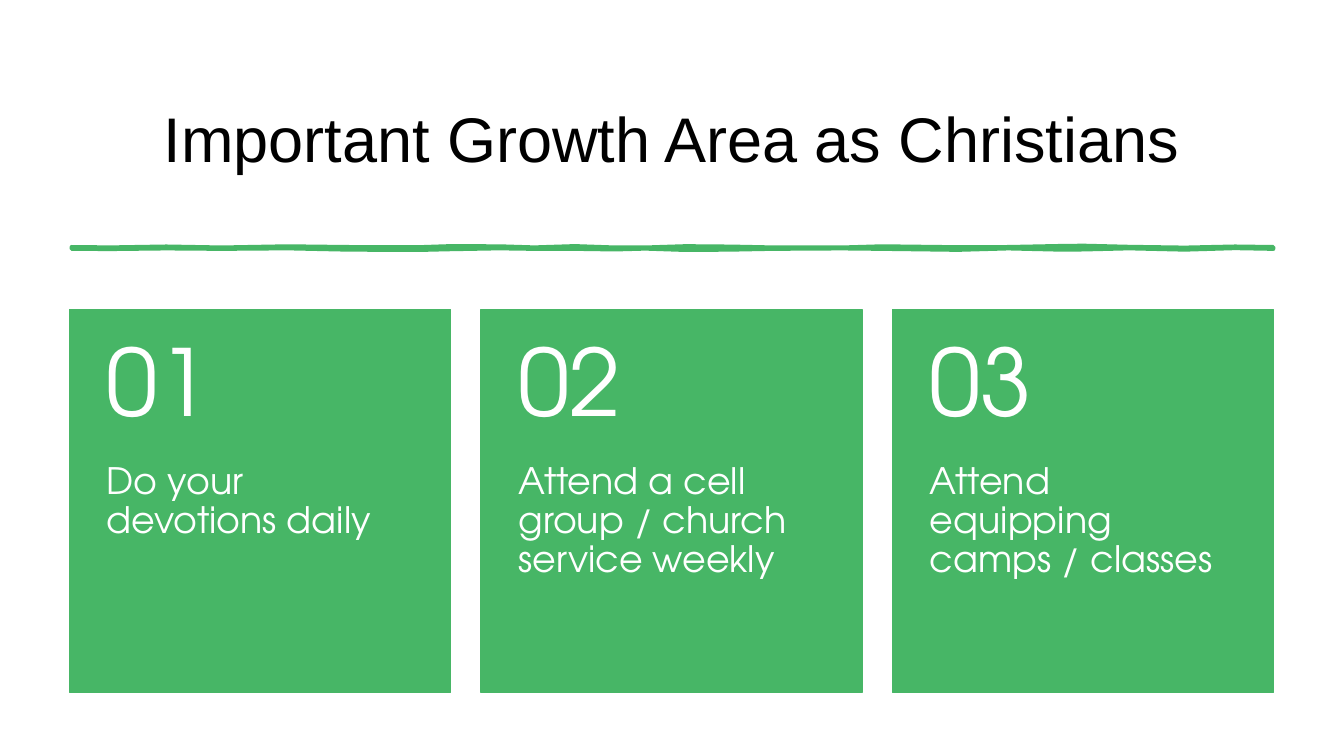
from pptx import Presentation
from pptx.dml.color import RGBColor
from pptx.enum.shapes import MSO_SHAPE
from pptx.enum.text import MSO_ANCHOR, PP_ALIGN
from pptx.util import Pt

# Content
TITLE = "Important Growth Area as Christians"
GROWTH_AREAS = [
    ("01", "Do your devotions daily"),
    ("02", "Attend a cell group / church service weekly"),
    ("03", "Attend equipping camps / classes"),
]
GREEN, WHITE, BLACK = "47B666", "FFFFFF", "000000"
TITLE_FONT, CARD_FONT = "Arial", "TeX Gyre Adventor"

# Layout in px, 100 px to the inch
PX = 9144
SLIDE_W, SLIDE_H = 1333, 750
LEFT, CONTENT_W = 69, 1194
TITLE_TOP, TITLE_H = 69, 144
CARD_TOP, CARD_W, CARD_H, NUMBER_H = 307, 378, 380, 152
CARD_STEP = (CONTENT_W - CARD_W) // (len(GROWTH_AREAS) - 1)
INSET_X = 37

# Hand-drawn rule: x in px, then top and bottom edge in tenths of a px
RULE_EDGES = [
    (71, 2450, 2470), (110, 2454, 2472), (165, 2445, 2466),
    (220, 2455, 2470), (285, 2443, 2465), (345, 2450, 2478),
    (415, 2452, 2481), (445, 2442, 2474), (495, 2443, 2465),
    (530, 2454, 2470), (570, 2441, 2470), (610, 2455, 2476),
    (640, 2455, 2468), (680, 2442, 2481), (725, 2446, 2478),
    (765, 2454, 2470), (835, 2455, 2466), (875, 2443, 2470),
    (950, 2452, 2480), (1000, 2450, 2466), (1055, 2439, 2479),
    (1075, 2437, 2476), (1120, 2448, 2465), (1175, 2456, 2478),
    (1225, 2445, 2463), (1263, 2450, 2470),
]


def color(value):
    return RGBColor.from_string(value)


def box(left, top, width, height):
    return [length * PX for length in (left, top, width, height)]


def paint(shape, line_width):
    shape.shadow.inherit = False
    shape.fill.solid()
    shape.fill.fore_color.rgb = color(GREEN)
    shape.line.color.rgb = color(GREEN)
    shape.line.width = Pt(line_width)


def write(frame, text, font, size, text_color, align, anchor):
    frame.word_wrap = True
    frame.vertical_anchor = anchor
    paragraph = frame.paragraphs[0]
    paragraph.alignment = align
    paragraph.line_spacing = 0.9
    run = paragraph.add_run()
    run.text = text
    run.font.name = font
    run.font.size = Pt(size)
    run.font.color.rgb = color(text_color)


def add_card_text(slide, area, text, size, anchor, inset_top, inset_bottom):
    frame = slide.shapes.add_textbox(*box(*area)).text_frame
    frame.margin_left = frame.margin_right = INSET_X * PX
    frame.margin_top, frame.margin_bottom = inset_top * PX, inset_bottom * PX
    write(frame, text, CARD_FONT, size, WHITE, PP_ALIGN.LEFT, anchor)


def add_rule(slide):
    top_edge = [(x * 10, top) for x, top, _ in RULE_EDGES]
    bottom_edge = [(x * 10, bottom) for x, _, bottom in RULE_EDGES]
    outline = top_edge + bottom_edge[::-1]
    builder = slide.shapes.build_freeform(*outline[0], scale=PX / 10)
    builder.add_line_segments(outline[1:], close=True)
    paint(builder.convert_to_shape(), 2.75)


def add_card(slide, left, number, task):
    card = slide.shapes.add_shape(
        MSO_SHAPE.RECTANGLE, *box(left, CARD_TOP, CARD_W, CARD_H))
    paint(card, 1)
    task_area = (left, CARD_TOP + NUMBER_H, CARD_W, CARD_H - NUMBER_H)
    add_card_text(slide, task_area, task, 26, MSO_ANCHOR.TOP, 0, 36)
    number_area = (left, CARD_TOP, CARD_W, NUMBER_H)
    add_card_text(slide, number_area, number, 66, MSO_ANCHOR.MIDDLE, 18, 18)


def main():
    deck = Presentation()
    deck.slide_width, deck.slide_height = SLIDE_W * PX, SLIDE_H * PX
    slide = deck.slides.add_slide(deck.slide_layouts[5])
    slide.background.fill.solid()
    slide.background.fill.fore_color.rgb = color(WHITE)

    # Title
    title = slide.shapes.title
    title.left, title.top, title.width, title.height = box(
        LEFT, TITLE_TOP, CONTENT_W, TITLE_H)
    write(title.text_frame, TITLE, TITLE_FONT, 45, BLACK,
          PP_ALIGN.CENTER, MSO_ANCHOR.MIDDLE)

    # Rule and cards
    add_rule(slide)
    for index, (number, task) in enumerate(GROWTH_AREAS):
        add_card(slide, LEFT + index * CARD_STEP, number, task)

    deck.save("out.pptx")


if __name__ == "__main__":
    main()
